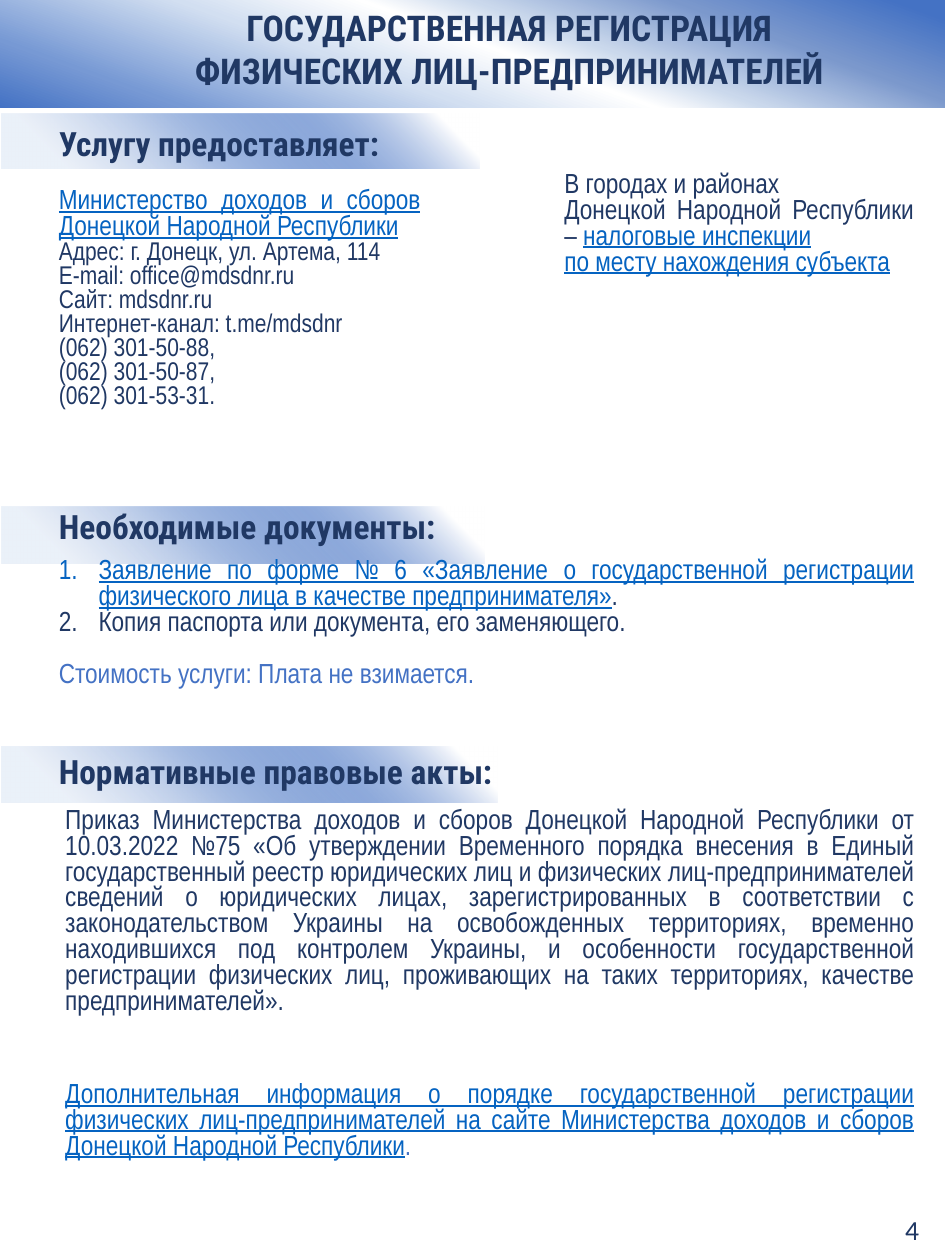
import pptx
import pptx.util
import pptx.dml.color
import pptx.enum.shapes
import pptx.enum.text
import pptx.oxml
import pptx.oxml.ns

Inches = pptx.util.Inches
Pt = pptx.util.Pt
ALIGN = pptx.enum.text.PP_ALIGN
NS = pptx.oxml.ns.nsdecls("a")
NAVY, LINK, BLUE = "203864", "0563C1", "4472C4"
HEAD, BODY = "Roboto Condensed", "Arial Narrow"


def paint(font, code):
    font.color.rgb = pptx.dml.color.RGBColor.from_string(code)


def write(frame, lines):
    """Each line: alignment, left indent, numbered, gap before, runs."""
    for n, (align, left, listed, gap, runs) in enumerate(lines):
        para = frame.paragraphs[0] if n == 0 else frame.add_paragraph()
        props = para._p.get_or_add_pPr()
        props.set("marL", str(Inches(left)))
        props.set("indent", str(Inches(-left if listed else 0)))
        if listed:
            props.append(pptx.oxml.parse_xml(
                f'<a:buAutoNum {NS} type="arabicPeriod"/>'))
        para.alignment = align
        if gap:
            para.space_before = Pt(gap)
        for words, size, face, code in runs:
            run = para.add_run()
            run.text = words
            run.font.size = Pt(size)
            run.font.name = face
            run.font.bold = face == HEAD
            run.font.underline = code == LINK
            paint(run.font, code)


deck = pptx.Presentation()
deck.slide_width, deck.slide_height = Inches(13.33), Inches(17.78)
slide = deck.slides.add_slide(deck.slide_layouts[5])

# Title banner
title = slide.shapes.title
title.left, title.top = Inches(0), Inches(0)
title.width, title.height = Inches(13.33), Inches(1.52)
frame = title.text_frame
frame.word_wrap = True
frame.auto_size = pptx.enum.text.MSO_AUTO_SIZE.NONE
frame.vertical_anchor = pptx.enum.text.MSO_ANCHOR.TOP
frame.margin_left, frame.margin_right = Inches(0.05), Inches(0.1)
frame.margin_top = Inches(0.09)
write(frame, [(ALIGN.CENTER, 1.09, False, 0, [(words, 36, HEAD, NAVY)]) for words in (
    "ГОСУДАРСТВЕННАЯ РЕГИСТРАЦИЯ", "ФИЗИЧЕСКИХ ЛИЦ-ПРЕДПРИНИМАТЕЛЕЙ")])

# Bands behind the section heads
deep = [(0, BLUE, 100), (15, "7799D4", 100), (38, "D2DFF1", 100), (53, "FFFFFF", 100),
        (62, "CAD8EC", 100), (78, "7B98CC", 100), (96, BLUE, 100)]
soft = [(13, "DDE6F4", 57), (40, "ABC0E4", 100), (67, BLUE, 60), (92, "FFFFFF", 100)]
fades = [(title, deep, 290)]
for top, width in ((1.61, 6.74), (7.15, 6.82), (10.53, 7)):
    band = slide.shapes.add_shape(pptx.enum.shapes.MSO_SHAPE.RECTANGLE,
                                  Inches(0.02), Inches(top), Inches(width), Inches(0.8))
    band.shadow.inherit = False
    band.line.fill.background()
    fades.append((band, soft, 315))

# Gradient fills
for shape, stops, angle in fades:
    shape.fill.gradient()
    grad = shape._element.spPr.find(pptx.oxml.ns.qn("a:gradFill"))
    marks = "".join(
        f'<a:gs pos="{place * 1000}"><a:srgbClr val="{code}">'
        f'<a:alpha val="{alpha * 1000}"/></a:srgbClr></a:gs>'
        for place, code, alpha in stops)
    grad.getparent().replace(grad, pptx.oxml.parse_xml(
        f'<a:gradFill {NS} rotWithShape="1"><a:gsLst>{marks}</a:gsLst>'
        f'<a:lin ang="{angle * 60000}" scaled="0"/></a:gradFill>'))

# Table grid
rows = [0.87, 4.28, 0.45, 3.26, 0.98, 3.87, 2.5]
cols = [6.64, 6.69]
grid = slide.shapes.add_table(len(rows), len(cols), Inches(0), Inches(1.53),
                              Inches(sum(cols)), Inches(sum(rows))).table
grid.first_row = grid.horz_banding = False
for c, width in enumerate(cols):
    grid.columns[c].width = Inches(width)
for r, height in enumerate(rows):
    grid.rows[r].height = Inches(height)
    for c in range(len(cols)):
        cell = grid.cell(r, c)
        cell.margin_left = Inches(0.83)
        cell.margin_right = Inches(0.71 if c == 0 and r == 1 else 0.44)
        cell.margin_top = cell.margin_bottom = Inches(0.05)
        props = cell._tc.get_or_add_tcPr()
        for side in ("lnL", "lnR", "lnT", "lnB"):
            thick = (r, side) in ((0, "lnB"), (1, "lnT"))
            props.append(pptx.oxml.parse_xml(
                f'<a:{side} {NS} w="{Pt(3 if thick else 1)}"><a:solidFill>'
                f'<a:srgbClr val="FFFFFF"/></a:solidFill></a:{side}>'))
        cell.fill.background()
    if r != 1:
        grid.cell(r, 0).merge(grid.cell(r, 1))

# Section heads
for r, words in ((0, "Услугу предоставляет:"), (4, "Нормативные правовые акты:")):
    grid.cell(r, 0).margin_top = Inches(0.24)
    write(grid.cell(r, 0).text_frame,
          [(ALIGN.LEFT, 0, False, 0, [(words, 34, HEAD, NAVY)])])

# Service provider
grid.cell(1, 0).margin_top = Inches(0.28)
facts = ["Адрес: г. Донецк, ул. Артема, 114", "E-mail: office@mdsdnr.ru",
         "Сайт: mdsdnr.ru", "Интернет-канал: t.me/mdsdnr",
         "(062) 301-50-88,", "(062) 301-50-87,", "(062) 301-53-31."]
write(grid.cell(1, 0).text_frame, [
    (ALIGN.JUSTIFY, 0, False, 0,
     [("Министерство доходов и сборов Донецкой Народной Республики", 28, BODY, LINK)]),
] + [(ALIGN.JUSTIFY, 0, False, 0, [(fact, 26, BODY, NAVY)]) for fact in facts])
write(grid.cell(1, 1).text_frame, [(ALIGN.JUSTIFY, 0.49, False, 0, runs) for runs in (
    [("В городах и районах", 28, BODY, NAVY)],
    [("Донецкой Народной Республики – ", 28, BODY, NAVY),
     ("налоговые инспекции", 28, BODY, LINK)],
    [("по месту нахождения субъекта", 28, BODY, LINK)])])

# Needed papers and cost
write(grid.cell(3, 0).text_frame, [
    (ALIGN.LEFT, 0, False, 0, [("Необходимые документы:", 34, HEAD, NAVY)]),
    (ALIGN.JUSTIFY, 0.56, True, 12, [
        ("Заявление по форме № 6 «Заявление о государственной регистрации "
         "физического лица в качестве предпринимателя»", 28, BODY, LINK),
        (".", 28, BODY, NAVY)]),
    (ALIGN.JUSTIFY, 0.56, True, 0,
     [("Копия паспорта или документа, его заменяющего.", 28, BODY, NAVY)]),
    (ALIGN.LEFT, 0, False, 26,
     [("Стоимость услуги: Плата не взимается.", 28, BODY, BLUE)])])

# Legal acts
write(grid.cell(5, 0).text_frame, [(ALIGN.JUSTIFY, 0.09, False, 0, [(
    "Приказ Министерства доходов и сборов Донецкой Народной Республики от "
    "10.03.2022 №75 «Об утверждении Временного порядка внесения в Единый "
    "государственный реестр юридических лиц и физических лиц-предпринимателей "
    "сведений о юридических лицах, зарегистрированных в соответствии с "
    "законодательством Украины на освобожденных территориях, временно "
    "находившихся под контролем Украины, и особенности государственной "
    "регистрации физических лиц, проживающих на таких территориях, качестве "
    "предпринимателей».", 28, BODY, NAVY)])])
write(grid.cell(6, 0).text_frame, [(ALIGN.JUSTIFY, 0.09, False, 0, [
    ("Дополнительная информация о порядке государственной регистрации "
     "физических лиц-предпринимателей на сайте Министерства доходов и сборов "
     "Донецкой Народной Республики", 28, BODY, LINK),
    (".", 28, BODY, BLUE)])])

# Page number
page = slide.shapes.add_textbox(Inches(12.67), Inches(17.07), Inches(0.4), Inches(0.57))
page.text_frame.word_wrap = False
write(page.text_frame, [(ALIGN.LEFT, 0, False, 0, [("4", 28, "Calibri", NAVY)])])

deck.save("out.pptx")
